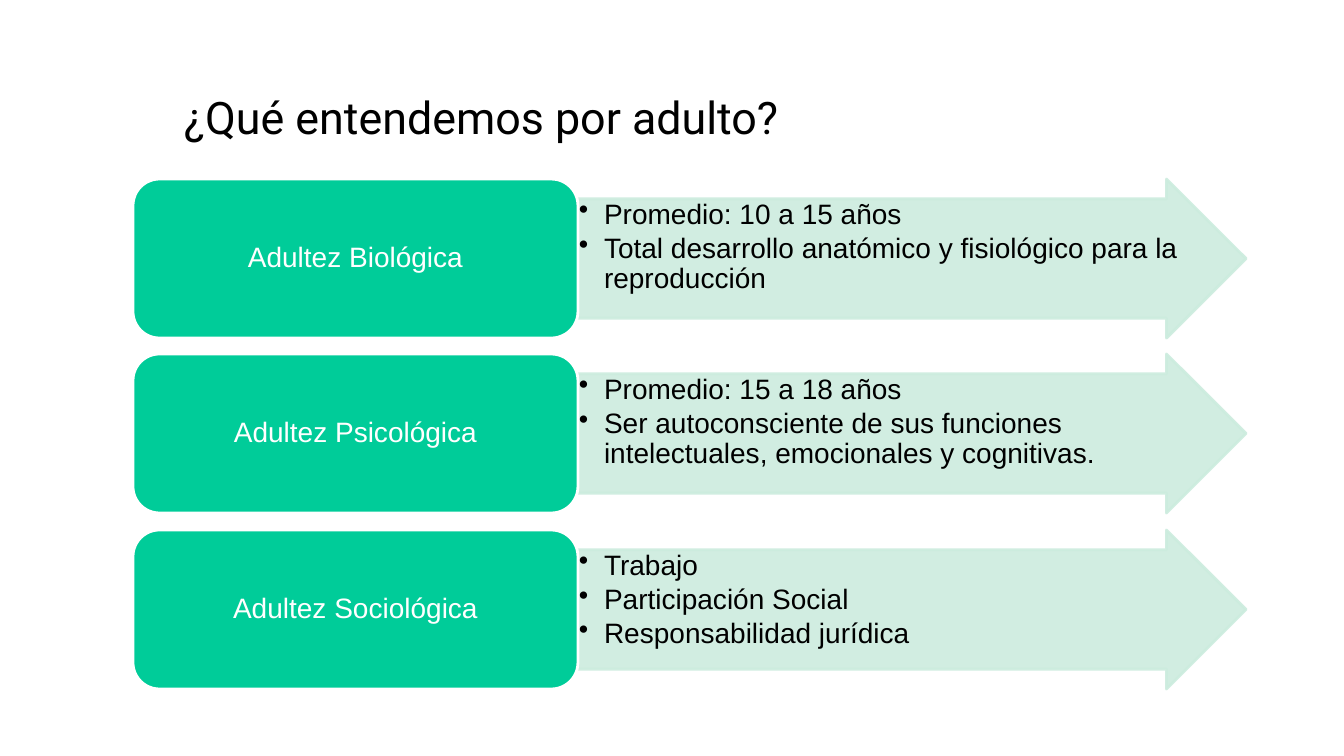
from lxml import etree
from pptx import Presentation
from pptx import util as u
from pptx.dml.color import RGBColor
from pptx.enum import shapes, text
from pptx.oxml.ns import qn

SCALE = 914400 / 100.8  # EMU in one px


def px(length):
    return u.Emu(round(length * SCALE))


def color(hex_string):
    return RGBColor.from_string(hex_string)


class SlideBuilder:
    WHITE, BLACK = "FFFFFF", "000000"
    GREEN, PALE_GREEN = "00CC99", "CCECDE"
    TITLE_FONT, BODY_FONT = "Roboto", "Arial"

    def __init__(self, presentation):
        self.slide = presentation.slides.add_slide(presentation.slide_layouts[6])

    def frame(self, shape, margins, anchor):
        frame = shape.text_frame
        frame.word_wrap = True
        frame.vertical_anchor = anchor
        frame.margin_left = frame.margin_right = px(margins[0])
        frame.margin_top = frame.margin_bottom = px(margins[1])
        return frame

    def add_lines(self, frame, lines, font, size, hex_string, align, spacing, bullets=False):
        for index, line in enumerate(lines):
            paragraph = frame.add_paragraph() if index else frame.paragraphs[0]
            if bullets:
                self.bullet(paragraph)
            paragraph.alignment = align
            paragraph.line_spacing = spacing
            paragraph.space_after = u.Pt(3 if bullets else 0)
            run = paragraph.add_run()
            run.text = line
            run.font.name = font
            run.font.size = u.Pt(size)
            run.font.color.rgb = color(hex_string)

    def bullet(self, paragraph):
        properties = paragraph._p.get_or_add_pPr()
        properties.set("marL", str(px(25)))
        properties.set("indent", str(-px(25)))
        etree.SubElement(properties, qn("a:buChar")).set("char", "•")

    def shape(self, kind, box, fill, line, opacity=100):
        shape = self.slide.shapes.add_shape(kind, *map(px, box))
        shape.shadow.inherit = False
        shape.fill.solid()
        shape.fill.fore_color.rgb = color(fill)
        shape.line.color.rgb = color(line)
        shape.line.width = u.Pt(2)
        if opacity < 100:
            for tone in shape._element.spPr.iter(qn("a:srgbClr")):
                etree.SubElement(tone, qn("a:alpha")).set("val", str(opacity * 1000))
        return shape

    def title(self, box, line):
        shape = self.slide.shapes.add_textbox(*map(px, box))
        frame = self.frame(shape, (10, 5), text.MSO_ANCHOR.MIDDLE)
        self.add_lines(frame, [line], self.TITLE_FONT, 32, self.BLACK,
                       text.PP_ALIGN.CENTER, 0.8)

    def arrow(self, box, lines):
        shape = self.shape(shapes.MSO_SHAPE.RIGHT_ARROW, box,
                           self.PALE_GREEN, self.PALE_GREEN, opacity=90)
        shape.adjustments[0] = 0.75
        shape.adjustments[1] = 0.5
        frame = self.frame(shape, (1, 1), text.MSO_ANCHOR.TOP)
        self.add_lines(frame, lines, self.BODY_FONT, 20, self.BLACK,
                       text.PP_ALIGN.LEFT, 0.9, bullets=True)

    def label(self, box, line):
        shape = self.shape(shapes.MSO_SHAPE.ROUNDED_RECTANGLE, box, self.GREEN, self.WHITE)
        frame = self.frame(shape, (8, 4), text.MSO_ANCHOR.MIDDLE)
        self.add_lines(frame, [line], self.BODY_FONT, 20, self.WHITE,
                       text.PP_ALIGN.CENTER, 0.9)


ADULTHOODS = [
    ("Adultez Biológica", [
        "Promedio: 10 a 15 años",
        "Total desarrollo anatómico y fisiológico para la reproducción",
    ]),
    ("Adultez Psicológica", [
        "Promedio: 15 a 18 años",
        "Ser autoconsciente de sus funciones intelectuales, emocionales y cognitivas.",
    ]),
    ("Adultez Sociológica", [
        "Trabajo",
        "Participación Social",
        "Responsabilidad jurídica",
    ]),
]
FIRST_TOP, LAST_TOP, ROW_HEIGHT = 179, 530, 159


def main():
    presentation = Presentation()
    presentation.slide_width = px(1344)
    presentation.slide_height = px(756)
    builder = SlideBuilder(presentation)

    # Heading
    builder.title((67, 76, 829, 92), "¿Qué entendemos por adulto?")

    # One row per kind of adulthood: arrow behind, label in front
    for row, (name, traits) in enumerate(ADULTHOODS):
        top = FIRST_TOP + row * (LAST_TOP - FIRST_TOP) // (len(ADULTHOODS) - 1)
        builder.arrow((578, top, 668, ROW_HEIGHT), traits)
        builder.label((133, top, 445, ROW_HEIGHT), name)

    presentation.save("out.pptx")


if __name__ == "__main__":
    main()
